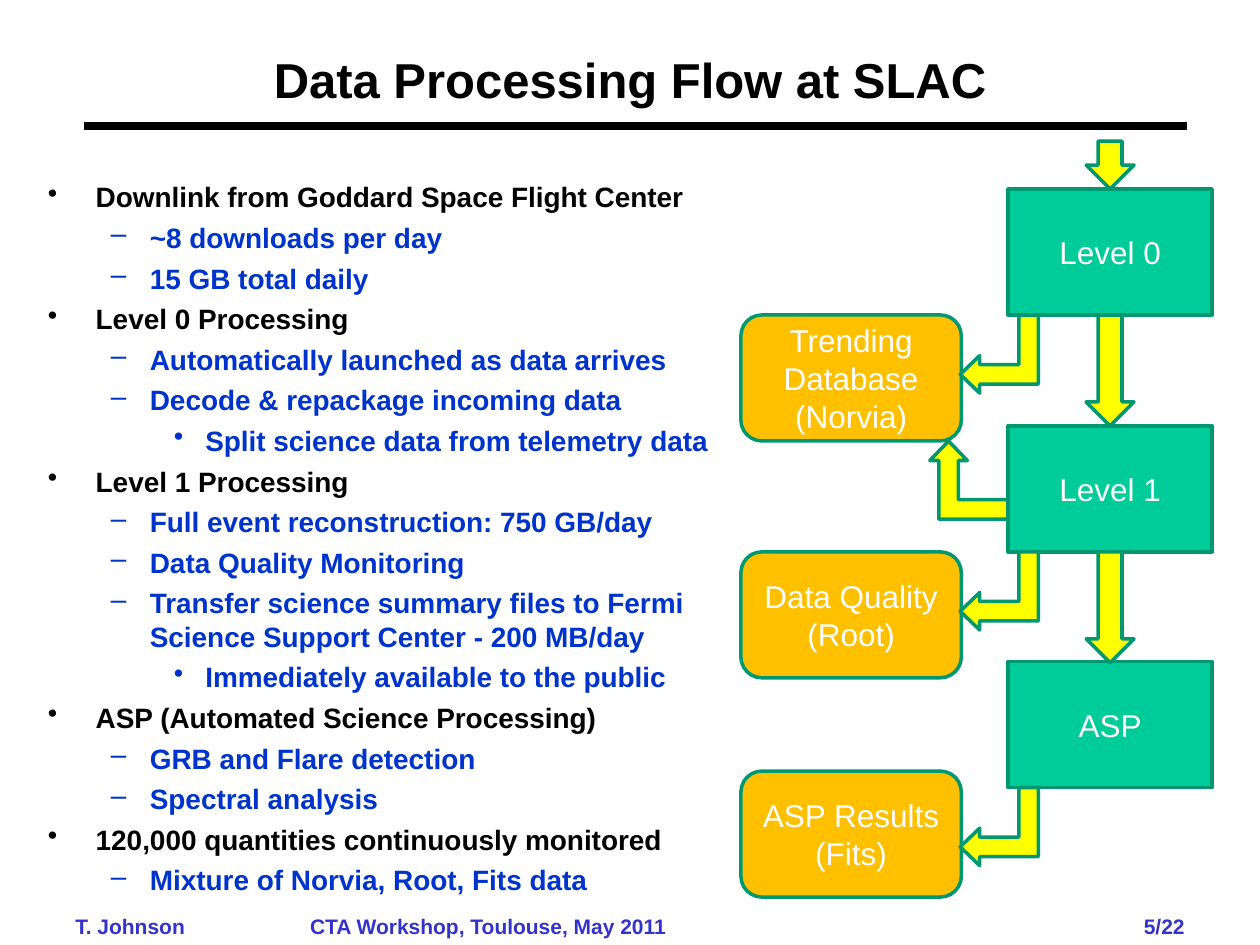
from dataclasses import dataclass
import lxml.etree
import pptx
import pptx.dml.color
import pptx.enum.shapes
import pptx.enum.text
import pptx.oxml.ns
import pptx.util

Inches = pptx.util.Inches
Pt = pptx.util.Pt
qn = pptx.oxml.ns.qn
SHAPE = pptx.enum.shapes.MSO_SHAPE
ALIGN = pptx.enum.text.PP_ALIGN
MIDDLE = pptx.enum.text.MSO_ANCHOR.MIDDLE


@dataclass(frozen=True)
class Theme:
    font: str = "Arial"
    title_size: int = 28
    body_size: int = 16
    box_size: int = 18
    footer_size: int = 12
    black: str = "000000"
    white: str = "FFFFFF"
    detail: str = "0033CC"
    footer: str = "3333CC"
    stage: str = "00CC99"
    store: str = "FFC000"
    arrow: str = "FFFF00"
    outline: str = "009771"


theme = Theme()


def add_run(paragraph, text, size, color, bold):
    run = paragraph.add_run()
    run.text = text
    run.font.name = theme.font
    run.font.size = Pt(size)
    run.font.bold = bold
    run.font.color.rgb = pptx.dml.color.RGBColor.from_string(color)


def add_block(kind, left, top, width, height, fill, lines=()):
    block = slide.shapes.add_shape(
        kind, Inches(left), Inches(top), Inches(width), Inches(height))
    block.shadow.inherit = False
    block.fill.solid()
    block.fill.fore_color.rgb = pptx.dml.color.RGBColor.from_string(fill)
    block.line.color.rgb = pptx.dml.color.RGBColor.from_string(theme.outline)
    block.line.width = Pt(2)
    frame = block.text_frame
    frame.vertical_anchor = MIDDLE
    for index, line in enumerate(lines):
        paragraph = frame.add_paragraph() if index else frame.paragraphs[0]
        paragraph.alignment = ALIGN.CENTER
        add_run(paragraph, line, theme.box_size, theme.white, False)
    return block


deck = pptx.Presentation()
deck.slide_width = Inches(10)
deck.slide_height = Inches(7.5)
slide = deck.slides.add_slide(deck.slide_layouts[5])

rule = slide.shapes.add_connector(
    pptx.enum.shapes.MSO_CONNECTOR.STRAIGHT,
    Inches(0.67), Inches(1), Inches(9.42), Inches(1))
rule.line.color.rgb = pptx.dml.color.RGBColor.from_string(theme.black)
rule.line.width = Pt(4.5)
lxml.etree.SubElement(rule._element.spPr, qn("a:effectLst"))

for text, left, width, alignment in (
    ("T. Johnson", 0.5, 1.25, ALIGN.LEFT),
    ("CTA Workshop, Toulouse, May 2011", 2, 3.75, ALIGN.CENTER),
    ("5/22", 8.25, 1.25, ALIGN.RIGHT),
):
    footer = slide.shapes.add_textbox(
        Inches(left), Inches(7.2), Inches(width), Inches(0.3)).text_frame
    footer.word_wrap = True
    footer.paragraphs[0].alignment = alignment
    add_run(footer.paragraphs[0], text, theme.footer_size, theme.footer, True)

title = slide.shapes.title
title.left, title.top = Inches(1.25), Inches(0.25)
title.width, title.height = Inches(7.5), Inches(0.75)
title.text_frame.vertical_anchor = MIDDLE
title.text_frame.paragraphs[0].alignment = ALIGN.CENTER
add_run(title.text_frame.paragraphs[0], "Data Processing Flow at SLAC",
        theme.title_size, theme.black, True)

outline = (
    (0, "Downlink from Goddard Space Flight Center"),
    (1, "~8 downloads per day"),
    (1, "15 GB total daily"),
    (0, "Level 0 Processing"),
    (1, "Automatically launched as data arrives"),
    (1, "Decode & repackage incoming data"),
    (2, "Split science data from telemetry data"),
    (0, "Level 1 Processing"),
    (1, "Full event reconstruction: 750 GB/day"),
    (1, "Data Quality Monitoring"),
    (1, "Transfer science summary files to Fermi Science Support Center - 200 MB/day"),
    (2, "Immediately available to the public"),
    (0, "ASP (Automated Science Processing)"),
    (1, "GRB and Flare detection"),
    (1, "Spectral analysis"),
    (0, "120,000 quantities continuously monitored"),
    (1, "Mixture of Norvia, Root, Fits data"),
)
level_styles = (
    (0.38, 0.38, "•", theme.black),
    (0.81, 0.31, "–", theme.detail),
    (1.25, 0.25, "•", theme.detail),
)
body = slide.shapes.add_textbox(
    Inches(0.38), Inches(1.38), Inches(5.5), Inches(5.5)).text_frame
body.word_wrap = True
body.margin_left = body.margin_right = 0
for index, (level, text) in enumerate(outline):
    margin, hanging, bullet, color = level_styles[level]
    paragraph = body.add_paragraph() if index else body.paragraphs[0]
    paragraph.level = level
    properties = paragraph._p.get_or_add_pPr()
    properties.set("marL", str(Inches(margin)))
    properties.set("indent", str(-Inches(hanging)))
    lxml.etree.SubElement(properties, qn("a:buChar")).set("char", bullet)
    if index:
        paragraph.space_before = Pt(4)
    add_run(paragraph, text, theme.body_size, color, True)

for stage, top in (("Level 0", 1.5), ("Level 1", 3.38), ("ASP", 5.25)):
    add_block(SHAPE.RECTANGLE, 8, top, 1.62, 1, theme.stage, (stage,))

for lines, top in (
    (("Trending Database", "(Norvia)"), 2.5),
    (("Data Quality", "(Root)"), 4.38),
    (("ASP Results", "(Fits)"), 6.12),
):
    add_block(SHAPE.ROUNDED_RECTANGLE, 5.88, top, 1.75, 1, theme.store, lines)

for top, height in ((1.12, 0.38), (2.5, 0.88), (4.38, 0.88)):
    add_block(SHAPE.DOWN_ARROW, 8.62, top, 0.38, height, theme.arrow)

for left, top, rotation in (
    (7.62, 2.5, 270), (7.62, 4.38, 270), (7.62, 6.25, 270), (7.38, 3.5, 0),
):
    bend = add_block(SHAPE.BENT_UP_ARROW, left, top, 0.62, 0.62, theme.arrow)
    bend.adjustments[1] = 0.24
    bend.rotation = rotation
    bend._element.spPr.find(qn("a:xfrm")).set("flipH", "1")

deck.save("out.pptx")
